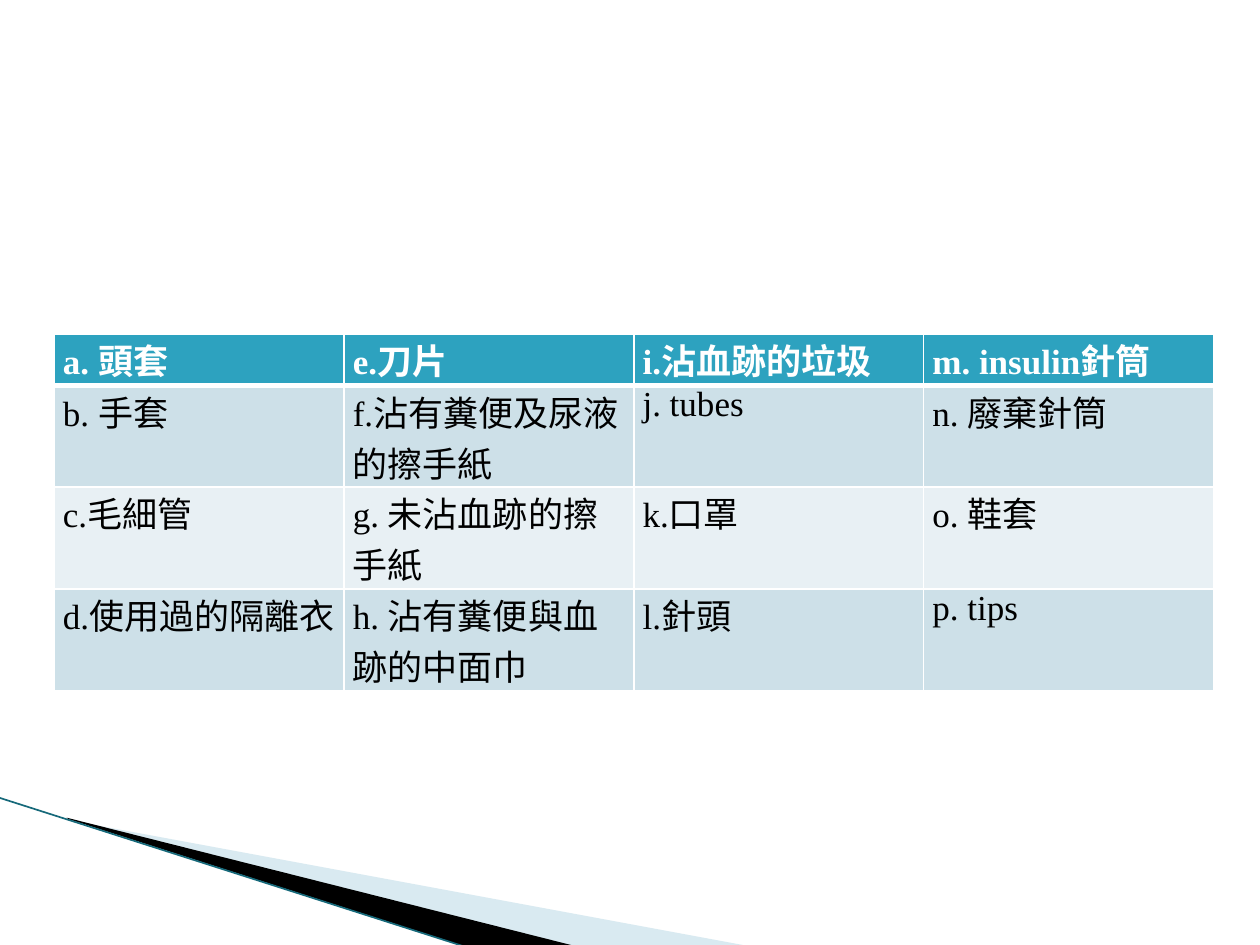
from dataclasses import dataclass

from lxml.etree import SubElement
from pptx import Presentation
from pptx.dml.color import RGBColor
from pptx.enum.shapes import MSO_CONNECTOR
from pptx.oxml.ns import qn
from pptx.util import Inches, Pt


@dataclass(frozen=True)
class Theme:
    font: str = "Times New Roman"
    text_size: int = 20
    white: str = "FFFFFF"
    black: str = "000000"
    header: str = "2DA2BF"
    bands: tuple = ("CDE0E8", "E8F0F4")
    pale_wedge: str = "A0CBDC"
    edge: str = "16697A"


class SlideBuilder:
    def __init__(self, slide, theme):
        self.slide = slide
        self.theme = theme

    def wedge(self, points, color, opacity=100):
        corners = [(Inches(x), Inches(y)) for x, y in points]
        builder = self.slide.shapes.build_freeform(*corners[0], scale=1.0)
        builder.add_line_segments(corners[1:], close=True)
        shape = builder.convert_to_shape()
        shape.shadow.inherit = False
        shape.fill.solid()
        shape.fill.fore_color.rgb = RGBColor.from_string(color)
        shape.line.fill.background()
        if opacity < 100:
            fill_color = shape.fill._xPr.find(qn("a:solidFill"))[0]
            SubElement(fill_color, qn("a:alpha"), val=str(opacity * 1000))

    def line(self, start, end, color, width):
        points = [Inches(value) for value in (*start, *end)]
        connector = self.slide.shapes.add_connector(MSO_CONNECTOR.STRAIGHT, *points)
        connector.line.color.rgb = RGBColor.from_string(color)
        connector.line.width = Pt(width)
        SubElement(connector._element.spPr, qn("a:effectLst"))

    def table(self, rows, left, top, column_width, row_height):
        count = len(rows[0])
        frame = self.slide.shapes.add_table(
            len(rows), count, Inches(left), Inches(top),
            Inches(column_width * count), Inches(row_height * len(rows)),
        )
        table = frame.table
        for column in table.columns:
            column.width = Inches(column_width)
        for row_index, labels in enumerate(rows):
            table.rows[row_index].height = Inches(row_height)
            for column_index, label in enumerate(labels):
                self.cell(table.cell(row_index, column_index), label, row_index)

    def cell(self, cell, label, row_index):
        theme = self.theme
        is_header = row_index == 0
        cell.margin_left = cell.margin_right = Inches(0.07)
        cell.margin_top = cell.margin_bottom = 0
        self.border(cell, "L", 1)
        self.border(cell, "R", 1)
        self.border(cell, "T", 3 if row_index == 1 else 1)
        self.border(cell, "B", 3 if is_header else 1)
        fill = theme.header if is_header else theme.bands[(row_index - 1) % 2]
        cell.fill.solid()
        cell.fill.fore_color.rgb = RGBColor.from_string(fill)
        span = cell.text_frame.paragraphs[0].add_run()
        span.text = label
        span.font.name = theme.font
        span.font.size = Pt(theme.text_size)
        span.font.bold = is_header
        color = theme.white if is_header else theme.black
        span.font.color.rgb = RGBColor.from_string(color)

    def border(self, cell, side, width):
        properties = cell._tc.get_or_add_tcPr()
        line = SubElement(properties, qn(f"a:ln{side}"), w=str(Pt(width)))
        fill = SubElement(line, qn("a:solidFill"))
        SubElement(fill, qn("a:srgbClr"), val=self.theme.white)


def main():
    deck = Presentation()
    deck.slide_width, deck.slide_height = Inches(10), Inches(7.5)
    theme = Theme()
    page = SlideBuilder(deck.slides.add_slide(deck.slide_layouts[6]), theme)

    page.wedge(
        [(0.55, 6.51), (5.95, 7.51), (4.56, 7.51), (0.55, 6.5)],
        theme.pale_wedge, opacity=40,
    )
    page.wedge([(0.53, 6.49), (4.57, 7.51), (3.72, 7.52), (0.54, 6.5)], theme.black)
    page.line((-0.01, 6.33), (3.71, 7.52), theme.edge, 0.95)

    waste_items = [
        ["a. 頭套", "e.刀片", "i.沾血跡的垃圾", "m. insulin針筒"],
        ["b. 手套", "f.沾有糞便及尿液的擦手紙", "j. tubes", "n. 廢棄針筒"],
        ["c.毛細管", "g. 未沾血跡的擦手紙", "k.口罩", "o. 鞋套"],
        ["d.使用過的隔離衣", "h. 沾有糞便與血跡的中面巾", "l.針頭", "p. tips"],
    ]
    page.table(waste_items, left=0.43, top=2.65, column_width=2.3, row_height=0.41)
    deck.save("out.pptx")


if __name__ == "__main__":
    main()
